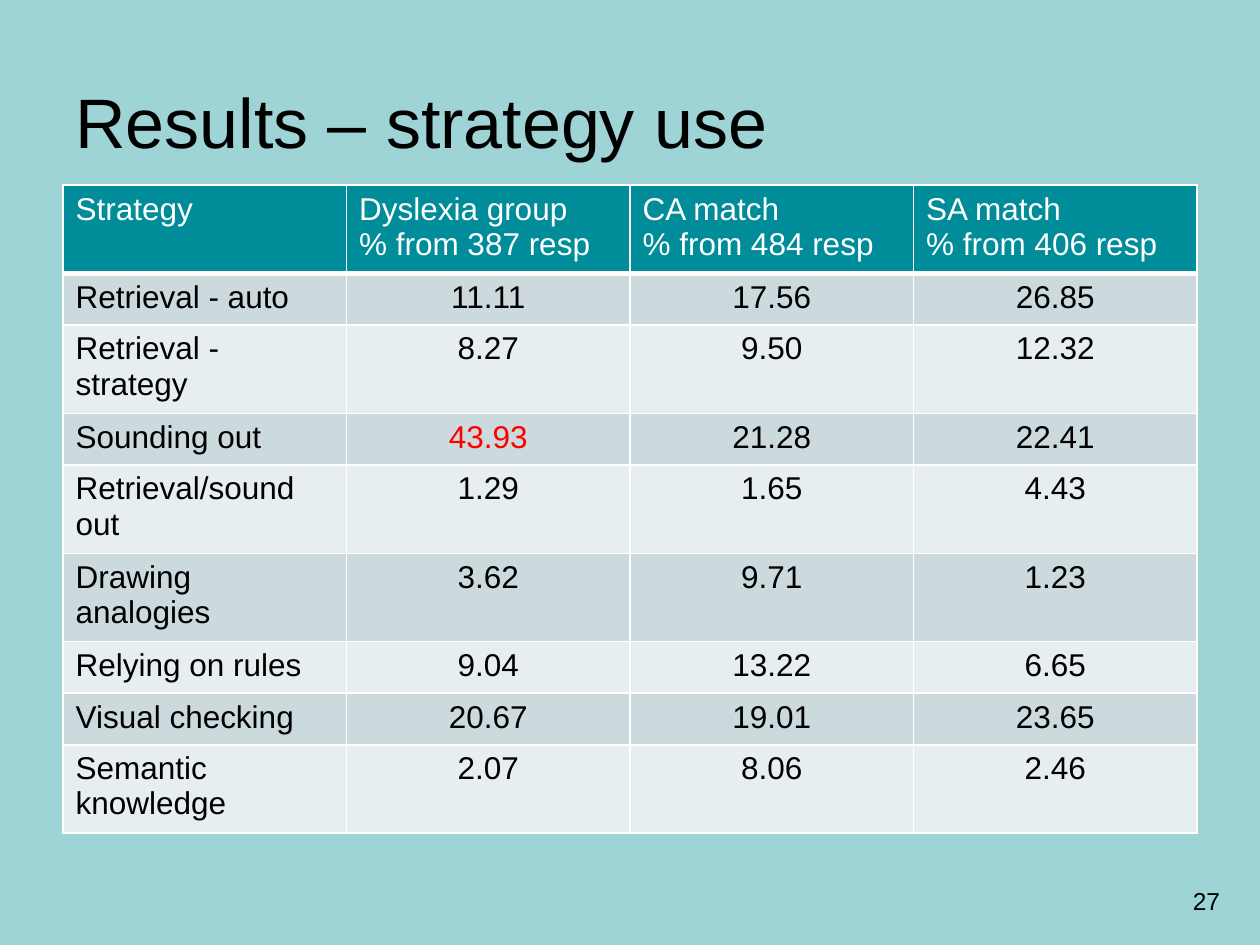
from lxml.etree import SubElement
from pptx import Presentation
from pptx.dml.color import RGBColor
from pptx.enum.text import MSO_ANCHOR, PP_ALIGN
from pptx.oxml.ns import qn
from pptx.util import Inches, Pt

BLACK, WHITE, RED = "000000", "FFFFFF", "FF0000"
TEAL, DARK, LIGHT = "008C99", "CCDADE", "E7EEEF"
HEADS = [
    ["Strategy"],
    ["Dyslexia group", "% from 387 resp"],
    ["CA match", "% from 484 resp"],
    ["SA match", "% from 406 resp"],
]
ROWS = [
    ("Retrieval - auto", "11.11", "17.56", "26.85"),
    ("Retrieval - strategy", "8.27", "9.50", "12.32"),
    ("Sounding out", "43.93", "21.28", "22.41"),
    ("Retrieval/sound out", "1.29", "1.65", "4.43"),
    ("Drawing analogies", "3.62", "9.71", "1.23"),
    ("Relying on rules", "9.04", "13.22", "6.65"),
    ("Visual checking", "20.67", "19.01", "23.65"),
    ("Semantic knowledge", "2.07", "8.06", "2.46"),
]
PEAK = "43.93"


def paint(fill, color):
    """Give a fill one solid colour."""
    fill.solid()
    fill.fore_color.rgb = RGBColor.from_string(color)


def write(frame, lines, size, color, align=PP_ALIGN.LEFT):
    """Write each line as a paragraph with one run."""
    for i, line in enumerate(lines):
        para = frame.add_paragraph() if i else frame.paragraphs[0]
        para.alignment = align
        run = para.add_run()
        run.text = line
        run.font.name = "Arial"
        run.font.size = Pt(size)
        run.font.bold = False
        paint(run.font.fill, color)


def add_text(slide, box, text, size, align=PP_ALIGN.LEFT):
    """Add a text box with its text centred in height."""
    frame = slide.shapes.add_textbox(*map(Inches, box)).text_frame
    frame.word_wrap = True
    frame.vertical_anchor = MSO_ANCHOR.MIDDLE
    write(frame, [text], size, BLACK, align)


def rule(cell, base):
    """Draw white borders, with the bottom one base points wide."""
    props = cell._tc.get_or_add_tcPr()
    for tag, width in (("lnL", 1), ("lnR", 1), ("lnT", 1), ("lnB", base)):
        line = SubElement(props, qn(f"a:{tag}"), w=str(Pt(width)))
        fill = SubElement(line, qn("a:solidFill"))
        SubElement(fill, qn("a:srgbClr"), val=WHITE)


def fill_cell(cell, lines, back, color, align=PP_ALIGN.LEFT, base=1):
    """Set the borders, fill and text of one cell."""
    rule(cell, base)
    paint(cell.fill, back)
    write(cell.text_frame, lines, 18, color, align)


def add_grid(slide):
    """Add the table of strategies by group."""
    count = len(ROWS) + 1
    box = map(Inches, (0.5, 1.47, 9, 0.41 * count))
    table = slide.shapes.add_table(count, len(HEADS), *box).table
    for row in table.rows:
        row.height = Inches(0.41)
    for c, lines in enumerate(HEADS):
        fill_cell(table.cell(0, c), lines, TEAL, WHITE, base=3)
    for r, row in enumerate(ROWS, 1):
        back = DARK if r % 2 else LIGHT
        for c, text in enumerate(row):
            color = RED if text == PEAK else BLACK
            align = PP_ALIGN.CENTER if c else PP_ALIGN.LEFT
            fill_cell(table.cell(r, c), [text], back, color, align)


def main():
    """Build the slide and save it."""
    deck = Presentation()
    deck.slide_width, deck.slide_height = Inches(10), Inches(7.5)
    slide = deck.slides.add_slide(deck.slide_layouts[6])
    paint(slide.background.fill, "9FD4D7")
    add_text(slide, (0.5, 0.52, 9, 0.87), "Results – strategy use", 40)
    add_grid(slide)
    add_text(slide, (9.15, 6.95, 0.85, 0.4), "27", 14, PP_ALIGN.CENTER)
    deck.save("out.pptx")


if __name__ == "__main__":
    main()
